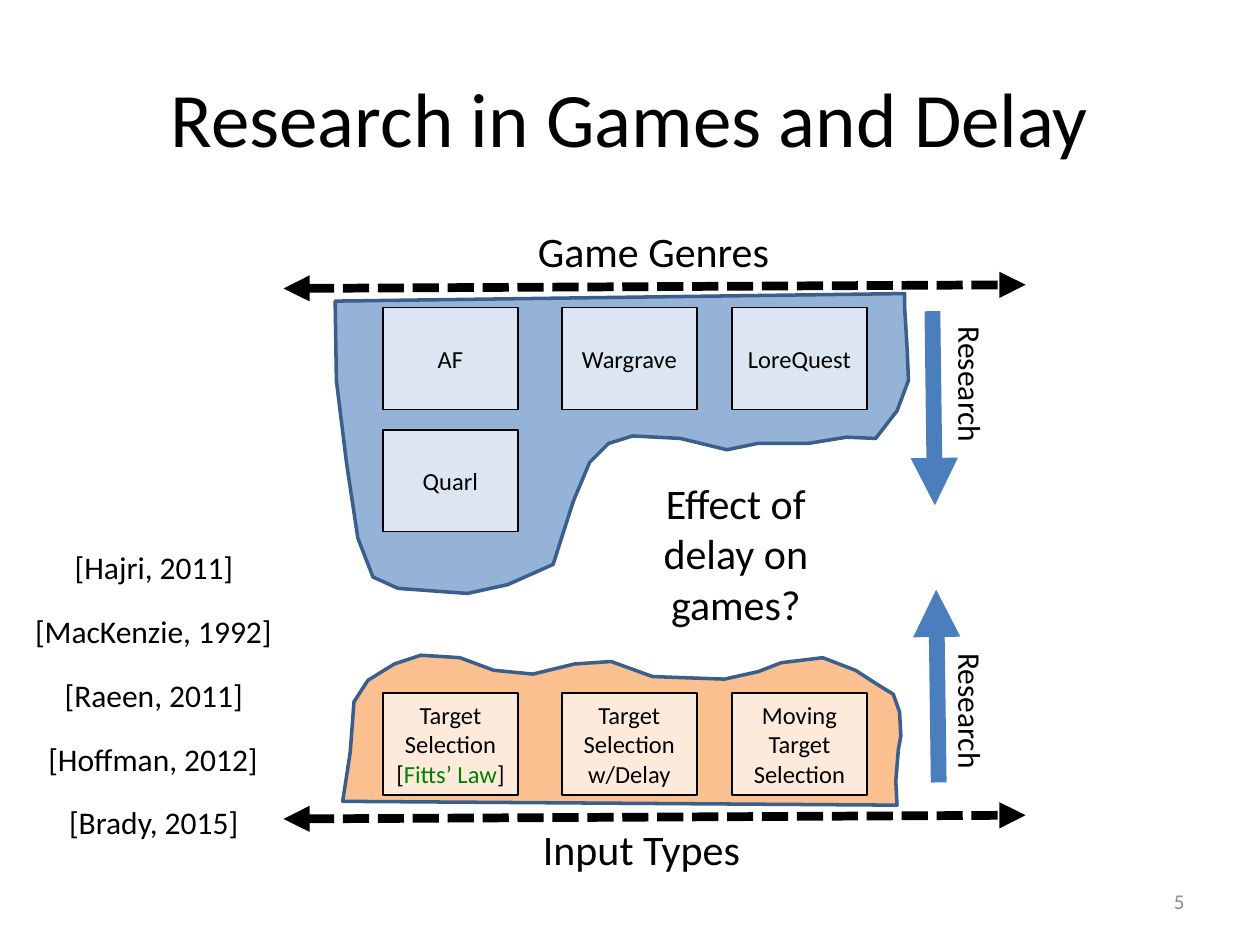
"""Build the slide on research in games and delay."""
from dataclasses import dataclass
from typing import NamedTuple, Optional

from lxml.etree import SubElement
from pptx import Presentation
from pptx.dml.color import RGBColor
from pptx.enum.dml import MSO_LINE
from pptx.enum.shapes import MSO_CONNECTOR, MSO_SHAPE
from pptx.enum.text import MSO_ANCHOR as Anchor, PP_ALIGN as Align
from pptx.oxml.ns import qn
from pptx.util import Inches, Pt


@dataclass(frozen=True)
class Theme:
    """Fonts, colours and type sizes."""
    font: str = "Calibri"
    ink: str = "000000"
    muted: str = "8C8C8C"
    law: str = "008000"
    outline: str = "3A5F8C"
    arrow: str = "4B7EBC"
    genre_area: str = "95B3D7"
    genre_card: str = "DCE6F2"
    input_area: str = "FAC090"
    input_card: str = "FDEADA"
    title: int = 44
    heading: int = 24
    body: int = 18
    card: int = 14
    number: int = 12


class Span(NamedTuple):
    """A run of text and its colour."""
    text: str
    color: str


class Frame(NamedTuple):
    """A rectangle in inches."""
    left: float
    top: float
    width: float
    height: float


@dataclass(frozen=True)
class Card:
    """A filled box holding paragraphs of spans."""
    left: float
    top: float
    fill: str
    paras: list[list[Span]]


@dataclass(frozen=True)
class Label:
    """Free text on the page."""
    text: str
    frame: Frame
    size: int
    align: Align = Align.LEFT
    rotation: int = 0
    wrap: bool = False
    color: str = Theme.ink
    anchor: Anchor = Anchor.TOP


@dataclass(frozen=True)
class Arrow:
    """A line with a triangle at its end, or at both ends when dashed."""
    start: tuple[float, float]
    end: tuple[float, float]
    color: str
    weight: int
    dash: Optional[MSO_LINE] = None


THEME = Theme()
COLUMNS = (3.04, 4.46, 5.81)
CARD_WIDTH, CARD_HEIGHT = 1.07, 0.81
GENRE_ROWS = (2.44, 3.41)
INPUT_ROW = 5.5
CITE_CENTER, CITE_TOP, CITE_STEP = 1.23, 4.3, 0.507

INPUT_AREA = [
    (2.72, 6.36), (2.78, 5.97), (2.81, 5.57), (2.92, 5.4), (3.13, 5.27),
    (3.34, 5.2), (3.65, 5.22), (3.92, 5.32), (4.23, 5.35), (4.56, 5.27),
    (4.85, 5.25), (5.18, 5.37), (5.47, 5.38), (5.75, 5.39), (6.02, 5.33),
    (6.2, 5.26), (6.53, 5.22), (6.79, 5.32), (6.96, 5.43), (7.09, 5.51),
    (7.14, 5.65), (7.15, 5.84), (7.13, 5.95), (7.11, 6.2), (7.12, 6.39),
]
GENRE_AREA = [
    (2.66, 2.39), (2.67, 3.02), (2.75, 3.67), (2.84, 4.27), (2.96, 4.58),
    (3.16, 4.67), (3.71, 4.71), (4.03, 4.64), (4.39, 4.48), (4.55, 3.98),
    (4.68, 3.67), (4.83, 3.52), (5.02, 3.46), (5.4, 3.48), (5.77, 3.57),
    (6.01, 3.52), (6.41, 3.52), (6.72, 3.47), (6.95, 3.48), (7.12, 3.26),
    (7.21, 3.02), (7.2, 2.77), (7.18, 2.44), (7.18, 2.33),
]


def genre(name: str, column: int, row: int = 0) -> Card:
    """Return the card of one game."""
    return Card(COLUMNS[column], GENRE_ROWS[row], THEME.genre_card, [[Span(name, THEME.ink)]])


def task(column: int, *paras: list[Span]) -> Card:
    """Return the card of one input type."""
    return Card(COLUMNS[column], INPUT_ROW, THEME.input_card, list(paras))


CARDS = [
    genre("AF", 0), genre("Quarl", 0, 1), genre("Wargrave", 1), genre("LoreQuest", 2),
    task(0, [Span("Target Selection", THEME.ink)],
         [Span("[", THEME.ink), Span("Fitts’ Law", THEME.law), Span("]", THEME.ink)]),
    task(1, [Span("Target Selection w/Delay", THEME.ink)]),
    task(2, [Span("Moving Target Selection", THEME.ink)]),
]
ARROWS = [
    *(Arrow((2.25, y), (8.14, y - 0.03), THEME.ink, 5, MSO_LINE.SQUARE_DOT) for y in (2.29, 6.5)),
    Arrow((7.4, 2.47), (7.42, 4.01), THEME.arrow, 9),
    Arrow((7.45, 6.21), (7.43, 4.68), THEME.arrow, 9),
]
CITATIONS = [
    ("[Hajri, 2011]", 1.47), ("[MacKenzie, 1992]", 2.1), ("[Raeen, 2011]", 1.63),
    ("[Hoffman, 2012]", 1.89), ("[Brady, 2015]", 1.56),
]
LABELS = [
    Label("Game Genres", Frame(4.17, 1.74, 2.06, 0.5), THEME.heading),
    Label("Input Types", Frame(4.21, 6.49, 1.78, 0.5), THEME.heading),
    Label("Effect of delay on games?", Frame(5.05, 3.74, 1.58, 1.31), THEME.heading,
          Align.CENTER, wrap=True),
    *(Label("Research", Frame(7.14, top, 1.13, 0.4), THEME.body, rotation=90)
      for top in (2.86, 5.45)),
    *(Label(text, Frame(CITE_CENTER - width / 2, CITE_TOP + row * CITE_STEP, width, 0.4),
            THEME.body) for row, (text, width) in enumerate(CITATIONS)),
    Label("5", Frame(7.17, 6.95, 2.33, 0.4), THEME.number, Align.RIGHT, wrap=True,
          color=THEME.muted, anchor=Anchor.MIDDLE),
]


def rgb(color: str) -> RGBColor:
    """Return the colour for a hex string."""
    return RGBColor.from_string(color)


def write(para, spans: list[Span], size: int, align: Align) -> None:
    """Add spans to a paragraph."""
    para.alignment = align
    for span in spans:
        run = para.add_run()
        run.text = span.text
        run.font.name, run.font.size = THEME.font, Pt(size)
        run.font.color.rgb = rgb(span.color)


def paint(shape, fill: str, line: str, weight: int) -> None:
    """Set the fill and line of a shape."""
    shape.shadow.inherit = False
    shape.fill.solid()
    shape.fill.fore_color.rgb = rgb(fill)
    shape.line.color.rgb = rgb(line)
    shape.line.width = Pt(weight)


def draw_area(page, points: list[tuple[float, float]], fill: str) -> None:
    """Draw a closed uneven area."""
    start, *rest = [(Inches(x), Inches(y)) for x, y in points]
    builder = page.shapes.build_freeform(*start, scale=1.0)
    builder.add_line_segments(rest, close=True)
    paint(builder.convert_to_shape(), fill, THEME.outline, 2)


def draw_card(page, card: Card) -> None:
    """Draw a card with centred text."""
    box = page.shapes.add_shape(
        MSO_SHAPE.RECTANGLE, *map(Inches, (card.left, card.top, CARD_WIDTH, CARD_HEIGHT)))
    paint(box, card.fill, THEME.ink, 1)
    frame = box.text_frame
    frame.word_wrap, frame.vertical_anchor = True, Anchor.MIDDLE
    for index, spans in enumerate(card.paras):
        para = frame.add_paragraph() if index else frame.paragraphs[0]
        write(para, spans, THEME.card, Align.CENTER)


def draw_label(page, label: Label) -> None:
    """Draw a text box."""
    box = page.shapes.add_textbox(*map(Inches, label.frame))
    box.rotation = label.rotation
    frame = box.text_frame
    frame.word_wrap, frame.vertical_anchor = label.wrap, label.anchor
    write(frame.paragraphs[0], [Span(label.text, label.color)], label.size, label.align)


def draw_arrow(page, arrow: Arrow) -> None:
    """Draw a connector with arrowheads."""
    link = page.shapes.add_connector(
        MSO_CONNECTOR.STRAIGHT, *map(Inches, (*arrow.start, *arrow.end)))
    link.line.color.rgb = rgb(arrow.color)
    link.line.width = Pt(arrow.weight)
    if arrow.dash:
        link.line.dash_style = arrow.dash
    outline = link.line._get_or_add_ln()
    for end in ("a:headEnd", "a:tailEnd") if arrow.dash else ("a:tailEnd",):
        SubElement(outline, qn(end), type="triangle")
    SubElement(link._element.spPr, qn("a:effectLst"))


def main() -> None:
    """Build and save the deck."""
    deck = Presentation()
    deck.slide_width, deck.slide_height = Inches(10), Inches(7.5)
    page = deck.slides.add_slide(deck.slide_layouts[5])
    title = page.shapes.title
    title.left, title.top, title.width, title.height = map(Inches, (0.5, 0.3, 9, 1.25))
    title.text_frame.vertical_anchor = Anchor.MIDDLE
    write(title.text_frame.paragraphs[0], [Span("Research in Games and Delay", THEME.ink)],
          THEME.title, Align.CENTER)
    draw_area(page, INPUT_AREA, THEME.input_area)
    draw_area(page, GENRE_AREA, THEME.genre_area)
    for items, draw in ((CARDS, draw_card), (ARROWS, draw_arrow), (LABELS, draw_label)):
        for item in items:
            draw(page, item)
    deck.save("out.pptx")


if __name__ == "__main__":
    main()
